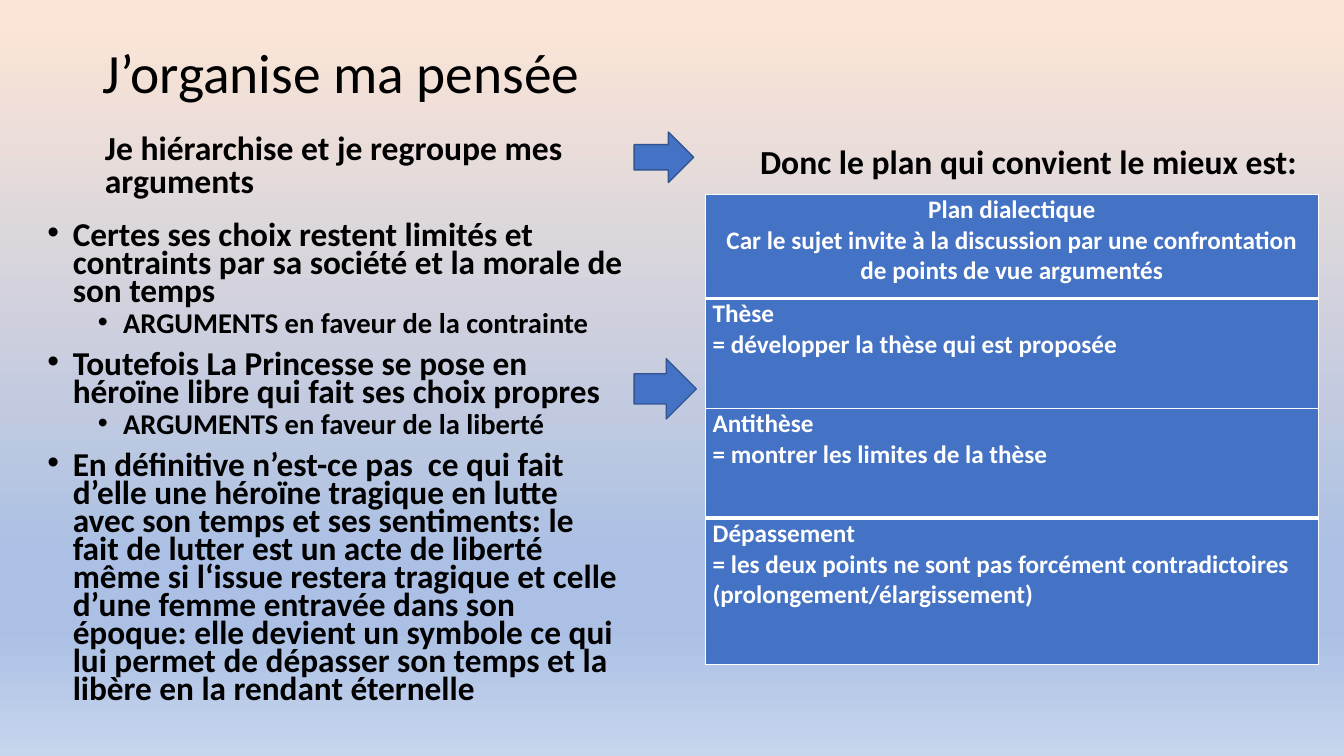
"""Build the slide that turns grouped arguments into a dialectical essay plan."""
from dataclasses import dataclass

import lxml.etree
import pptx
import pptx.dml.color
import pptx.enum.shapes
import pptx.enum.text
import pptx.oxml.ns
import pptx.util

Cm = pptx.util.Cm
Pt = pptx.util.Pt
RGB = pptx.dml.color.RGBColor.from_string
qn = pptx.oxml.ns.qn
SubElement = lxml.etree.SubElement
ALIGN = pptx.enum.text.PP_ALIGN
ANCHOR = pptx.enum.text.MSO_ANCHOR


@dataclass(frozen=True)
class Theme:
    font: str = "Calibri"
    ink: str = "000000"
    white: str = "FFFFFF"
    accent: str = "4472C4"
    outline: str = "325491"
    backdrop: tuple = ((3, "FBE5D6"), (74, "ABC0E4"), (83, "ABC0E4"), (100, "C7D5ED"))
    title: float = 39.6
    heading: float = 24
    points: tuple = (23.8, 20.4)
    cell: float = 18


theme = Theme()


def place(sp, left, top, width, height, anchor):
    sp.left, sp.top, sp.width, sp.height = Cm(left), Cm(top), Cm(width), Cm(height)
    tf = sp.text_frame
    tf.word_wrap = True
    tf.auto_size = pptx.enum.text.MSO_AUTO_SIZE.NONE
    tf.vertical_anchor = anchor
    return tf


def format_paragraph(p, size, color, bold, align, spacing, before):
    p.alignment = align
    p.line_spacing = spacing
    p.space_before = Pt(before)
    for r in p.runs:
        r.font.name = theme.font
        r.font.size = Pt(size)
        r.font.bold = bold
        r.font.color.rgb = RGB(color)


prs = pptx.Presentation()
prs.slide_width, prs.slide_height = Cm(33.87), Cm(19.05)
s = prs.slides.add_slide(prs.slide_layouts.get_by_name("Comparison"))
title, left_heading, points, right_heading, spare = s.placeholders
spare.element.getparent().remove(spare.element)

fill = s.background.fill
fill.gradient()
fill.gradient_angle = 270
stops = next(s.element.iter(qn("a:gsLst")))
for gs in list(stops):
    stops.remove(gs)
for percent, color in theme.backdrop:
    gs = SubElement(stops, qn("a:gs"), pos=str(percent * 1000))
    SubElement(gs, qn("a:srgbClr"), val=color)

tf = place(title, 2.34, 1.02, 29.21, 1.75, ANCHOR.MIDDLE)
tf.text = "J’organise ma pensée"
format_paragraph(tf.paragraphs[0], theme.title, theme.ink, False, ALIGN.LEFT, 0.9, 0)

headings = [
    (left_heading, "Je hiérarchise et je regroupe mes arguments", 2.39, 3.15, 2.01),
    (right_heading, "Donc le plan qui convient le mieux est:", 18.9, 3.45, 1.24),
]
for sp, text, left, top, height in headings:
    tf = place(sp, left, top, 14.33, height, ANCHOR.BOTTOM)
    tf.text = text
    format_paragraph(tf.paragraphs[0], theme.heading, theme.ink, True, ALIGN.LEFT, 0.8, 10)

arguments = [
    (0, "Certes ses choix restent limités et contraints par sa société et la morale de son temps"),
    (1, "ARGUMENTS en faveur de la contrainte"),
    (0, "Toutefois La Princesse se pose en héroïne libre qui fait ses choix propres"),
    (1, "ARGUMENTS en faveur de la liberté"),
    (0, "En définitive n’est-ce pas  ce qui fait d’elle une héroïne tragique en lutte avec son "
        "temps et ses sentiments: le fait de lutter est un acte de liberté même si l‘issue "
        "restera tragique et celle d’une femme entravée dans son époque: elle devient un symbole "
        "ce qui lui permet de dépasser son temps et la libère en la rendant éternelle"),
]
tf = place(points, 0.94, 5.51, 15.04, 12.75, ANCHOR.TOP)
tf.text = "\n".join(text for level, text in arguments)
for p, (level, text) in zip(tf.paragraphs, arguments):
    p.level = level
    format_paragraph(p, theme.points[level], theme.ink, True, ALIGN.LEFT, 0.7, 10 - 5 * level)
    pPr = p._p.get_or_add_pPr()
    pPr.set("marL", str(Cm(0.64 + 1.27 * level)))
    pPr.set("indent", str(-Cm(0.64)))
    SubElement(pPr, qn("a:buFont"), typeface="Arial")
    SubElement(pPr, qn("a:buChar"), char="•")

plan = [
    (2.62, 1, 3, ALIGN.CENTER, "Plan dialectique\nCar le sujet invite à la discussion par une "
     "confrontation de points de vue argumentés"),
    (2.77, 3, 1, ALIGN.LEFT, "Thèse\n= développer la thèse qui est proposée"),
    (2.77, 1, 3, ALIGN.LEFT, "Antithèse\n= montrer les limites de la thèse"),
    (3.68, 3, 1, ALIGN.LEFT, "Dépassement\n= les deux points ne sont pas forcément "
     "contradictoires (prolongement/élargissement)"),
]
total = sum(row[0] for row in plan)
table = s.shapes.add_table(len(plan), 1, Cm(17.78), Cm(4.9), Cm(15.44), Cm(total)).table
for row, (height, above, below, align, text) in zip(table.rows, plan):
    row.height = Cm(height)
    cell = row.cells[0]
    cell.margin_left = cell.margin_right = Cm(0.18)
    cell.margin_top = cell.margin_bottom = 0
    cell.text_frame.text = text
    for p in cell.text_frame.paragraphs:
        format_paragraph(p, theme.cell, theme.white, True, align, 1.0, 0)
    tcPr = cell._tc.get_or_add_tcPr()
    for side, width in (("L", 1), ("R", 1), ("T", above), ("B", below)):
        ln = SubElement(tcPr, qn(f"a:ln{side}"), w=str(Pt(width)))
        SubElement(SubElement(ln, qn("a:solidFill")), qn("a:srgbClr"), val=theme.white)
    cell.fill.solid()
    cell.fill.fore_color.rgb = RGB(theme.accent)

for top, width, height in ((3.33, 1.5, 1.27), (9.04, 1.57, 1.52)):
    arrow = s.shapes.add_shape(pptx.enum.shapes.MSO_SHAPE.RIGHT_ARROW,
                               Cm(15.98), Cm(top), Cm(width), Cm(height))
    arrow.shadow.inherit = False
    arrow.fill.solid()
    arrow.fill.fore_color.rgb = RGB(theme.accent)
    arrow.line.color.rgb = RGB(theme.outline)
    arrow.line.width = Pt(1)

prs.save("out.pptx")
